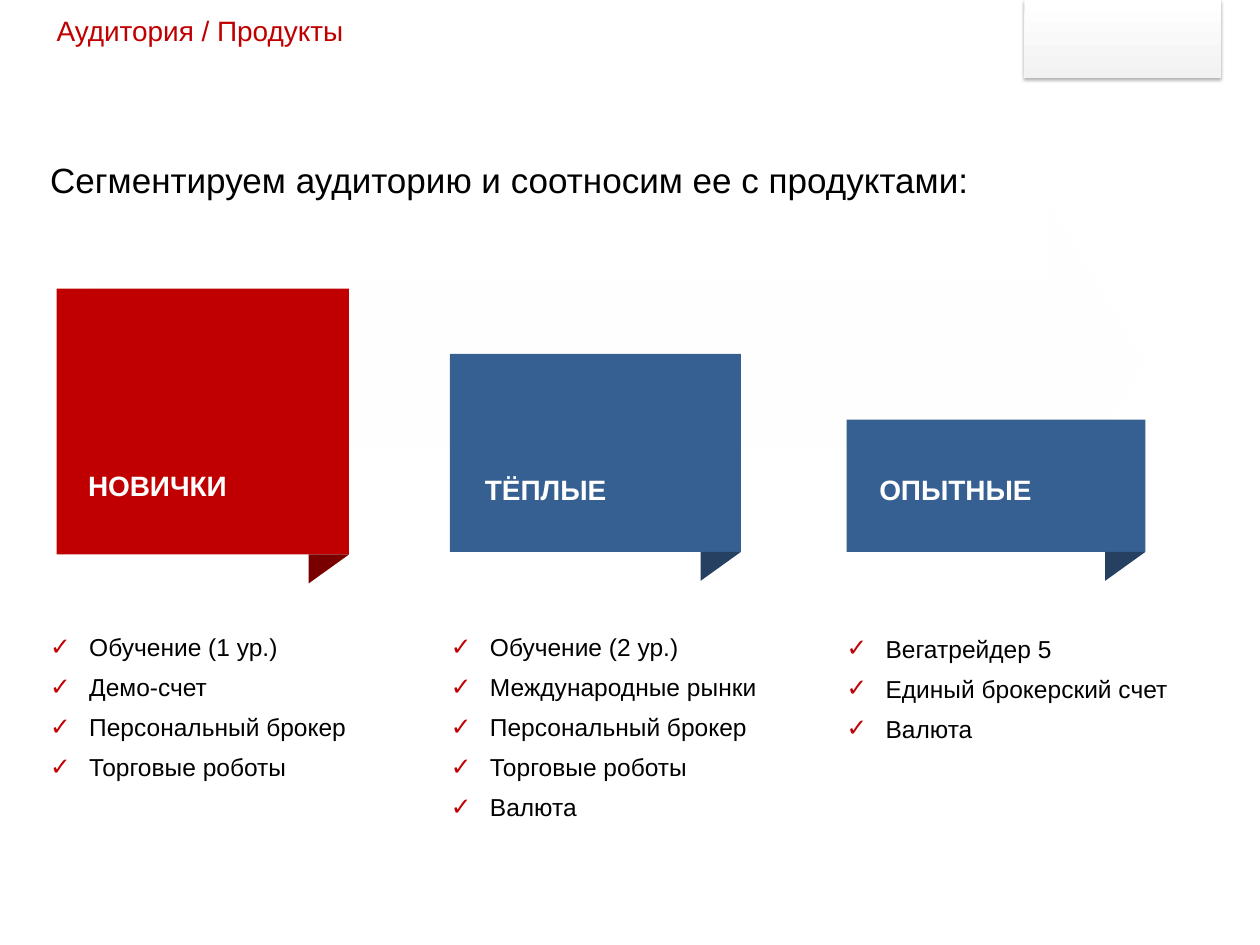
from dataclasses import dataclass

from lxml.etree import SubElement
from pptx import Presentation
from pptx.dml.color import RGBColor
from pptx.enum.shapes import MSO_SHAPE
from pptx.oxml.ns import qn
from pptx.shapes.autoshape import Shape
from pptx.slide import Slide
from pptx.util import Inches, Pt

RED = RGBColor(0xC0, 0x00, 0x00)
DARK_RED = RGBColor(0x7A, 0x00, 0x00)
BLUE = RGBColor(0x37, 0x60, 0x92)
DARK_BLUE = RGBColor(0x25, 0x40, 0x61)
WHITE = RGBColor(0xFF, 0xFF, 0xFF)
PALE_GRAY = RGBColor(0xF2, 0xF2, 0xF2)
BLACK = RGBColor(0x00, 0x00, 0x00)

FOLD_WIDTH, FOLD_HEIGHT = 0.32, 0.23


@dataclass(frozen=True)
class Box:
    left: float
    top: float
    width: float
    height: float

    def emu(self) -> tuple[int, ...]:
        return tuple(Inches(n) for n in (self.left, self.top, self.width, self.height))


@dataclass(frozen=True)
class Segment:
    title: str
    title_box: Box
    banner: Box
    color: RGBColor
    fold_color: RGBColor
    products_box: Box
    products: tuple[str, ...]


SEGMENTS = (
    Segment("НОВИЧКИ", Box(0.6, 3.67, 1.72, 0.37), Box(0.45, 2.29, 2.32, 2.11),
            RED, DARK_RED, Box(0.3, 4.97, 3.54, 1.85),
            ("Обучение (1 ур.)", "Демо-счет", "Персональный брокер",
             "Торговые роботы\v")),
    Segment("ТЁПЛЫЕ", Box(3.75, 3.7, 1.72, 0.37), Box(3.57, 2.81, 2.31, 1.57),
            BLUE, DARK_BLUE, Box(3.48, 4.97, 2.85, 2.17),
            ("Обучение (2 ур.)", "Международные рынки", "Персональный брокер",
             "Торговые роботы", "Валюта\v")),
    Segment("ОПЫТНЫЕ", Box(6.88, 3.7, 1.72, 0.37), Box(6.72, 3.33, 2.37, 1.05),
            BLUE, DARK_BLUE, Box(6.62, 4.98, 2.79, 0.98),
            ("Вегатрейдер 5", "Единый брокерский счет", "Валюта")),
)


def add_figure(slide: Slide, kind: MSO_SHAPE, box: Box, color: RGBColor) -> Shape:
    figure = slide.shapes.add_shape(kind, *box.emu())
    figure.shadow.inherit = False
    figure.fill.solid()
    figure.fill.fore_color.rgb = color
    figure.line.fill.background()
    return figure


def set_gradient(figure: Shape, start: RGBColor, end: RGBColor, angle: int) -> None:
    figure.fill.gradient()
    figure.fill.gradient_angle = angle
    for stop, color in zip(figure.fill.gradient_stops, (start, end)):
        stop.color.rgb = color


def set_opacity(figure: Shape, *percents: int) -> None:
    colors = figure._element.spPr.iter(qn("a:srgbClr"))
    for color, percent in zip(colors, percents):
        SubElement(color, qn("a:alpha"), val=str(percent * 1000))


def add_drop_shadow(figure: Shape) -> None:
    effects = figure._element.spPr.find(qn("a:effectLst"))
    shadow = SubElement(effects, qn("a:outerShdw"), blurRad=str(Pt(2)),
                        dist=str(Pt(1)), dir="5400000", rotWithShape="0")
    color = SubElement(shadow, qn("a:srgbClr"), val=str(BLACK))
    SubElement(color, qn("a:alpha"), val="30000")


def add_text(slide: Slide, box: Box, lines: tuple[str, ...], size: int,
             color: RGBColor, bold: bool = False, wrap: bool = True,
             checked: bool = False) -> None:
    frame = slide.shapes.add_textbox(*box.emu()).text_frame
    frame.word_wrap = wrap
    for index, line in enumerate(lines):
        paragraph = frame.add_paragraph() if index else frame.paragraphs[0]
        paragraph.text = line
        if checked:
            paragraph.space_after = Pt(6)
            add_check_mark(paragraph)
        paragraph.font.size = Pt(size)
        for run in paragraph.runs:
            run.font.name = "Arial"
            run.font.size = Pt(size)
            run.font.bold = bold
            run.font.color.rgb = color


def add_check_mark(paragraph) -> None:
    properties = paragraph._p.get_or_add_pPr()
    properties.set("marL", str(Inches(0.31)))
    properties.set("indent", str(-Inches(0.31)))
    bullet_color = SubElement(properties, qn("a:buClr"))
    SubElement(bullet_color, qn("a:srgbClr"), val=str(RED))
    SubElement(properties, qn("a:buFont"), typeface="Arial")
    SubElement(properties, qn("a:buChar"), char="✓")


def add_segment(slide: Slide, segment: Segment) -> None:
    banner = segment.banner
    add_text(slide, segment.products_box, segment.products, 14, BLACK, checked=True)
    add_figure(slide, MSO_SHAPE.RECTANGLE, banner, segment.color)
    fold_box = Box(banner.left + banner.width - FOLD_WIDTH,
                   banner.top + banner.height, FOLD_WIDTH, FOLD_HEIGHT)
    fold = add_figure(slide, MSO_SHAPE.RIGHT_TRIANGLE, fold_box, segment.fold_color)
    fold.rotation = 180
    fold._element.spPr.xfrm.set("flipH", "1")
    add_text(slide, segment.title_box, (segment.title,), 16, WHITE, bold=True)


def main() -> None:
    presentation = Presentation()
    presentation.slide_width = Inches(10)
    presentation.slide_height = Inches(7.5)
    slide = presentation.slides.add_slide(presentation.slide_layouts[6])

    header = add_figure(slide, MSO_SHAPE.RECTANGLE, Box(0, 0, 10, 0.52), WHITE)
    set_opacity(header, 55)
    corner_plate = add_figure(slide, MSO_SHAPE.RECTANGLE, Box(8.13, 0, 1.56, 0.62), WHITE)
    set_gradient(corner_plate, WHITE, PALE_GRAY, 270)
    add_drop_shadow(corner_plate)

    add_text(slide, Box(0.35, 0.06, 2.51, 0.37), ("Аудитория / Продукты",),
             16, RED, wrap=False)
    add_text(slide, Box(0.3, 1.21, 9.27, 0.98),
             ("Сегментируем аудиторию и соотносим ее с продуктами:",), 20, BLACK)

    progress = add_figure(slide, MSO_SHAPE.RIGHT_ARROW, Box(0.63, 1.51, 8.46, 2.72), WHITE)
    progress.adjustments[0] = 0.5
    progress.adjustments[1] = 0.3
    set_gradient(progress, WHITE, WHITE, 0)
    set_opacity(progress, 0, 51)

    for segment in SEGMENTS:
        add_segment(slide, segment)

    presentation.save("out.pptx")


if __name__ == "__main__":
    main()
